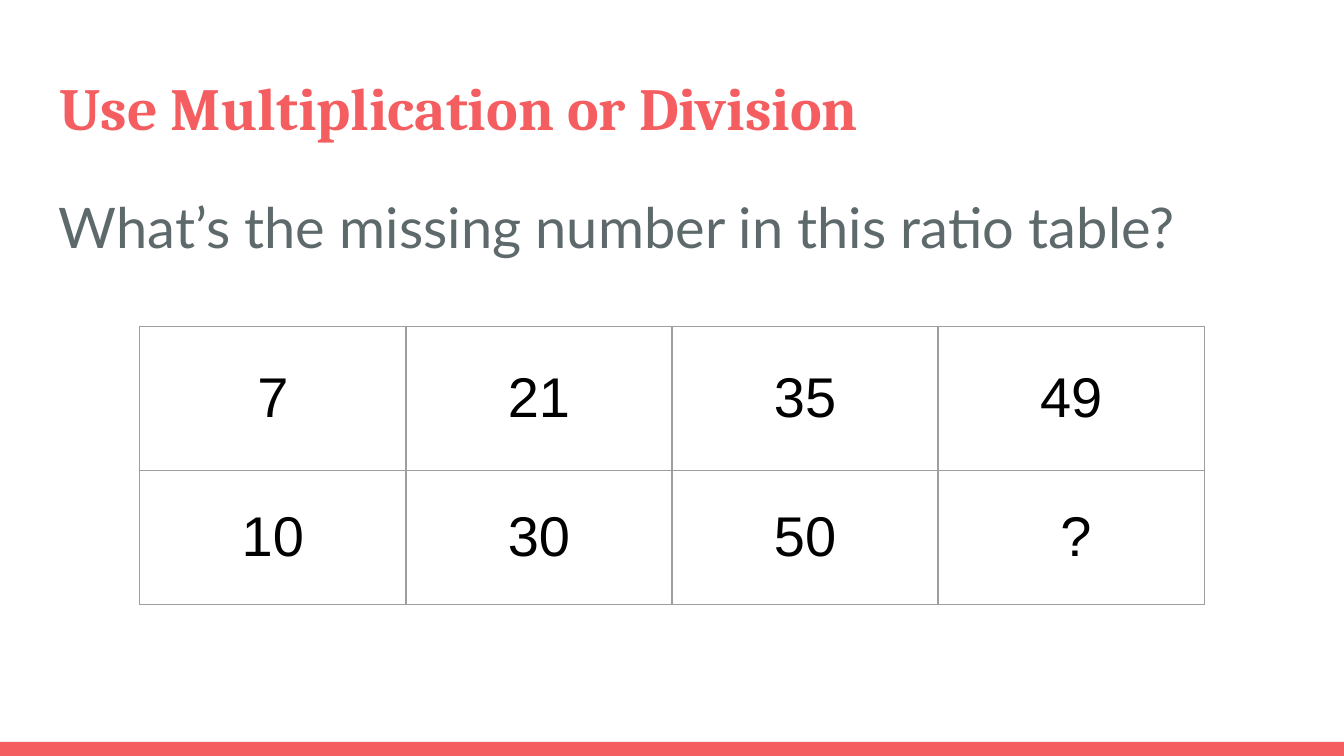
from pptx import Presentation
from pptx import util as u
from pptx.dml.color import RGBColor
from pptx.enum import shapes, text
from pptx.oxml import parse_xml
from pptx.oxml.ns import nsdecls

CORAL, SLATE, GRAY, BLACK, WHITE = "F55E61", "5E696C", "9E9E9E", "000000", "FFFFFF"
RATIOS = [["7", "21", "35", "49"], ["10", "30", "50", "?"]]
ROW_HEIGHTS = [1.07, 1]
COLUMN_WIDTH = 1.98
UNKNOWN_INDENT = 0.81
MARGINS = dict.fromkeys(
    ["margin_left", "margin_top", "margin_right", "margin_bottom"], u.Inches(0.1))


def color(value):
    return RGBColor.from_string(value)


def set_format(target, values):
    for name, value in values.items():
        setattr(target, name, value)


def write(para, words, font, size, ink, bold=False):
    span = para.add_run()
    span.text = words
    set_format(span.font, {"name": font, "size": u.Pt(size), "bold": bold})
    span.font.color.rgb = color(ink)


def place(shape, left, top, width, height):
    set_format(shape, {"left": u.Inches(left), "top": u.Inches(top),
                       "width": u.Inches(width), "height": u.Inches(height)})


def set_frame(frame):
    set_format(frame, MARGINS | {"word_wrap": True,
                                 "auto_size": text.MSO_AUTO_SIZE.NONE,
                                 "vertical_anchor": text.MSO_ANCHOR.TOP})


def add_footer_band(page):
    band = page.shapes.add_shape(
        shapes.MSO_SHAPE.RECTANGLE, 0, u.Inches(5.52), u.Inches(10), u.Inches(0.11))
    band.shadow.inherit = False
    band.fill.solid()
    band.fill.fore_color.rgb = color(CORAL)
    band.line.fill.background()


def add_title(page, words):
    title = page.shapes.title
    place(title, 0.34, 0.43, 9.32, 0.68)
    set_frame(title.text_frame)
    para = title.text_frame.paragraphs[0]
    para.alignment = text.PP_ALIGN.LEFT
    write(para, words, "Cambria", 32, CORAL, bold=True)


def add_question(page, words):
    box = page.shapes.add_textbox(0, 0, 0, 0)
    place(box, 0.34, 1.26, 9.32, 3.74)
    set_frame(box.text_frame)
    para = box.text_frame.paragraphs[0]
    set_format(para, {"line_spacing": 1.15, "space_after": u.Pt(16)})
    write(para, words, "Lato", 30, SLATE)


def add_borders(cell):
    properties = cell._tc.get_or_add_tcPr()
    for index, side in enumerate("LRTB"):
        properties.insert(index, parse_xml(
            f'<a:ln{side} {nsdecls("a")} w="{u.Pt(0.75)}"><a:solidFill>'
            f'<a:srgbClr val="{GRAY}"/></a:solidFill></a:ln{side}>'))


def fill_cell(cell, value):
    set_format(cell, MARGINS | {"vertical_anchor": text.MSO_ANCHOR.MIDDLE})
    cell.fill.background()
    add_borders(cell)
    para = cell.text_frame.paragraphs[0]
    if value == "?":  # the unknown is indented from the left
        para.alignment = text.PP_ALIGN.LEFT
        para._p.get_or_add_pPr().set("marL", str(u.Inches(UNKNOWN_INDENT)))
    else:
        para.alignment = text.PP_ALIGN.CENTER
    write(para, value, "Arial", 30, BLACK)


def add_ratio_table(page):
    columns = len(RATIOS[0])
    table = page.shapes.add_table(
        len(RATIOS), columns, u.Inches(1.04), u.Inches(2.43),
        u.Inches(columns * COLUMN_WIDTH), u.Inches(sum(ROW_HEIGHTS))).table
    set_format(table, {"first_row": False, "horz_banding": False})
    for column in table.columns:
        column.width = u.Inches(COLUMN_WIDTH)
    for row, height, values in zip(table.rows, ROW_HEIGHTS, RATIOS):
        row.height = u.Inches(height)
        for cell, value in zip(row.cells, values):
            fill_cell(cell, value)


def main():
    deck = Presentation()
    width = u.Inches(10)
    set_format(deck, {"slide_width": width, "slide_height": width * 9 // 16})
    page = deck.slides.add_slide(deck.slide_layouts[5])  # title only
    page.background.fill.solid()
    page.background.fill.fore_color.rgb = color(WHITE)

    add_footer_band(page)
    add_title(page, "Use Multiplication or Division")
    add_question(page, "What’s the missing number in this ratio table?")
    add_ratio_table(page)
    deck.save("out.pptx")


if __name__ == "__main__":
    main()
